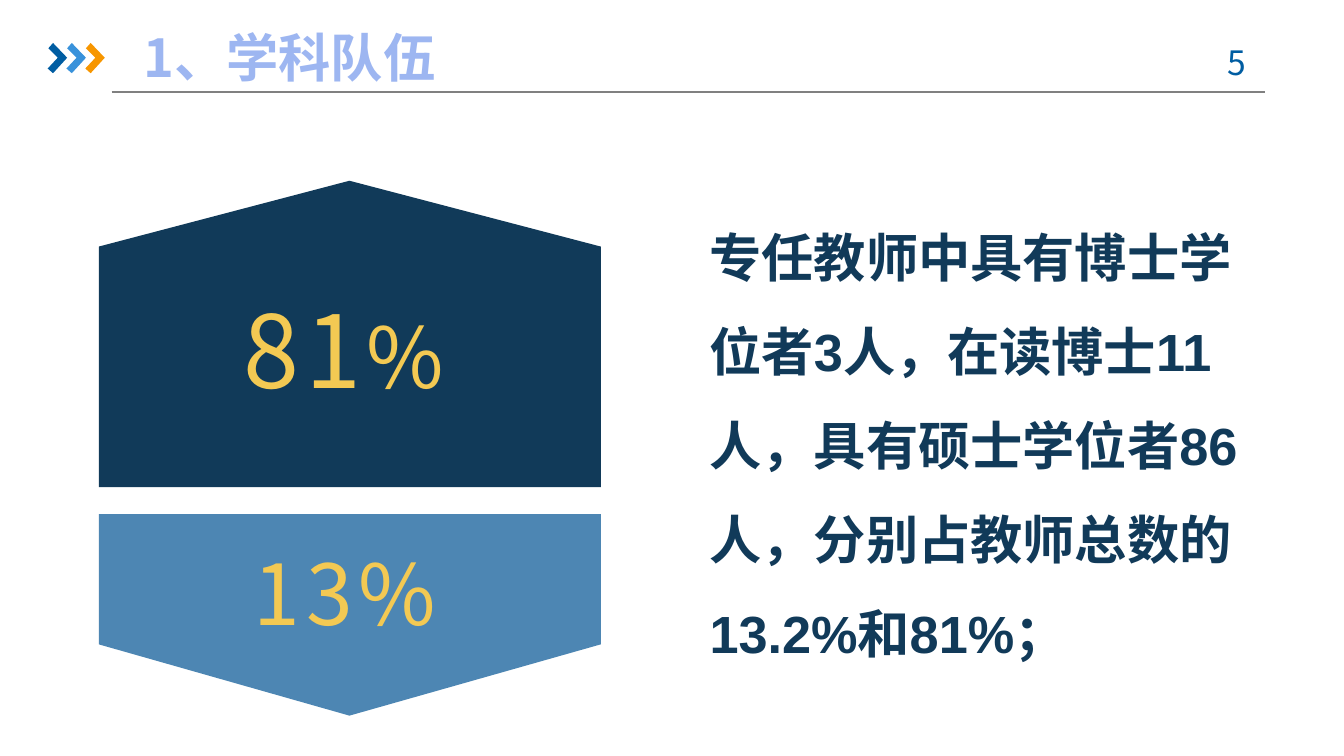
from pptx import Presentation
from pptx.dml.color import RGBColor
from pptx.enum.shapes import MSO_CONNECTOR
from pptx.enum.text import PP_ALIGN
from pptx.util import Pt
from lxml.etree import SubElement
from pptx.oxml.ns import qn

PX = 4572  # 200 px to the inch
NAVY = RGBColor(0x11, 0x3A, 0x59)
STEEL = RGBColor(0x4D, 0x86, 0xB3)
GOLD = RGBColor(0xF3, 0xC9, 0x53)
BLUE = RGBColor(0x00, 0x5D, 0xA2)
SKY = RGBColor(0x39, 0x92, 0xDB)
ORANGE = RGBColor(0xF7, 0x96, 0x00)
GRAY = RGBColor(0x80, 0x80, 0x80)
PERIWINKLE = RGBColor(0x9D, 0xB6, 0xF1)
SANS = "Noto Sans CJK SC"


def add_polygon(slide, x, y, points, color):
    """Draw a filled outline whose points are relative to (x, y)."""
    (x0, y0), *rest = [(x + dx, y + dy) for dx, dy in points]
    builder = slide.shapes.build_freeform(x0, y0, scale=PX)
    builder.add_line_segments(rest, close=True)
    sp = builder.convert_to_shape()
    sp.shadow.inherit = False
    sp.fill.solid()
    sp.fill.fore_color.rgb = color
    sp.line.fill.background()


def add_text(slide, box, runs, size, color, font=SANS, bold=False,
             align=PP_ALIGN.LEFT, wrap=True):
    """Add a box, in px, with one paragraph and return its text frame."""
    sp = slide.shapes.add_textbox(*(v * PX for v in box))
    tf = sp.text_frame
    tf.word_wrap = wrap
    p = tf.paragraphs[0]
    p.alignment = align
    for text in runs:
        p.add_run().text = text
    p.font.name, p.font.size, p.font.bold = font, Pt(size), bold
    p.font.color.rgb = color
    return tf


def add_header(slide, x, y, w, h):
    rule = slide.shapes.add_connector(
        MSO_CONNECTOR.STRAIGHT, (x + 95) * PX, (y + h) * PX,
        (x + w) * PX, (y + h) * PX)
    rule.line.color.rgb = GRAY
    rule.line.width = Pt(0.75)
    SubElement(rule._element.spPr, qn("a:effectLst"))

    chevron = [(1, 8), (8, 0), (29, 22), (8, 45), (0, 38), (15, 22)]
    for i, color in enumerate((BLUE, SKY, ORANGE)):
        add_polygon(slide, x + 28 * i, y + 36, chevron, color)

    add_text(slide, (x + 1696, y + 24, 146, 80), ["5"], 18, BLUE,
             align=PP_ALIGN.CENTER)
    tf = add_text(slide, (x + 123, y, 508, 114), ["1、", "学科队伍"], 28,
                  PERIWINKLE, bold=True)
    tf.paragraphs[0].runs[1].font.name = "Arial"


def add_percentage(slide, box, runs):
    tf = add_text(slide, box, runs, 45, GOLD, align=PP_ALIGN.CENTER, wrap=False)
    for r in tf.paragraphs[0].runs:
        r.font._element.set("spc", "300")
    return tf


def add_shares(slide, x, y, w):
    """Stack the two pointed blocks with their percentages."""
    mid = w // 2
    add_polygon(slide, x, y,
                [(0, 98), (mid, 0), (w, 98), (w, 456), (0, 456)], NAVY)
    add_polygon(slide, x, y + 496,
                [(0, 0), (w, 0), (w, 194), (mid, 300), (0, 194)], STEEL)
    tf = add_percentage(slide, (x + 189, y + 149, 352, 212), ["81", "%"])
    tf.paragraphs[0].runs[0].font.size = Pt(54)
    add_percentage(slide, (x + 205, y + 527, 322, 180), ["13%"])


def add_summary(slide, x, y, w, h):
    tf = add_text(
        slide, (x, y, w, h),
        ["专任教师中具有博士学位者3人，在读博士11人，具有硕士学位者86人，"
         "分别占教师总数的13.2%和81%；"],
        28, NAVY, font="Arial", bold=True)
    tf.paragraphs[0].line_spacing = 1.5
    tf.margin_left = tf.margin_right = 14 * PX
    tf.margin_top = tf.margin_bottom = 8 * PX


def main():
    prs = Presentation()
    prs.slide_width, prs.slide_height = 2000 * PX, 1125 * PX
    slide = prs.slides.add_slide(prs.slide_layouts[6])
    add_header(slide, 71, 28, 1811, 109)
    add_shares(slide, 147, 269, 747)
    add_summary(slide, 1042, 280, 840, 488)
    prs.save("out.pptx")


if __name__ == "__main__":
    main()
